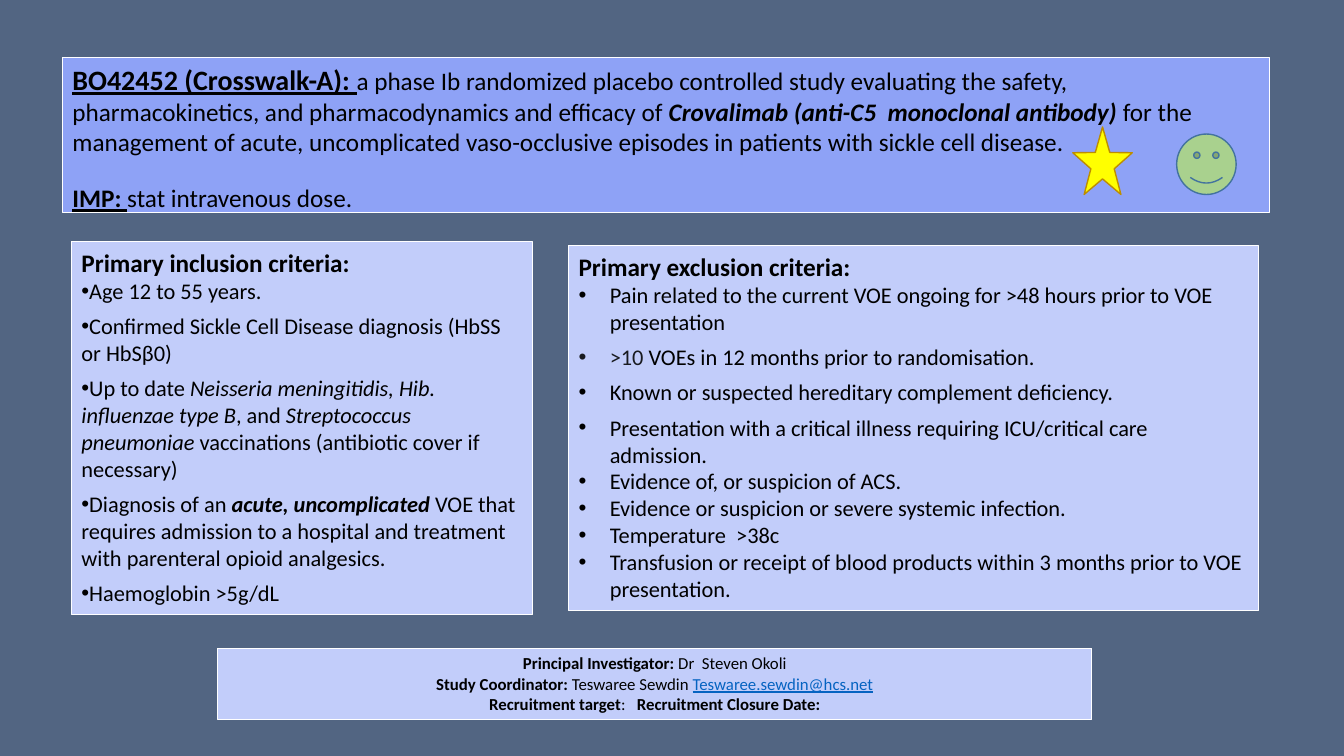
from pptx import Presentation
from pptx.dml.color import RGBColor
from pptx.enum.shapes import MSO_SHAPE
from pptx.enum.text import MSO_ANCHOR, PP_ALIGN
from pptx.oxml.ns import qn
from pptx.util import Inches, Pt
from lxml import etree

RECT, SMILE, STAR = MSO_SHAPE.RECTANGLE, MSO_SHAPE.SMILEY_FACE, MSO_SHAPE.STAR_5_POINT
TOP, LEFT, CENTER = MSO_ANCHOR.TOP, PP_ALIGN.LEFT, PP_ALIGN.CENTER

SLATE = RGBColor(0x52, 0x65, 0x82)
BLUE = RGBColor(0x8E, 0xA2, 0xF6)
PALE = RGBColor(0xC2, 0xCD, 0xFA)
WHITE = RGBColor(0xFF, 0xFF, 0xFF)
BLACK = RGBColor(0, 0, 0)
INK = RGBColor(0x19, 0x1B, 0x20)
LINK = RGBColor(0x05, 0x63, 0xC1)
GREEN = RGBColor(0xA9, 0xD1, 0x8E)
NAVY = RGBColor(0x43, 0x73, 0x9E)
YELLOW = RGBColor(0xFF, 0xFF, 0x00)
GOLD = RGBColor(0xBD, 0x8E, 0x00)

FONT = "Calibri"
HANG = 0.31
PLAIN = {}
BOLD = {"bold": True}
ITALIC = {"italic": True}
STRONG = {"bold": True, "italic": True}
LABEL = {"bold": True, "underline": True}

# Each paragraph is a list of (text, format) runs.
TITLE = [
    [("BO42452 (Crosswalk-A): ", {**LABEL, "size": Pt(20)}),
     ("a phase Ib randomized placebo controlled study evaluating the safety, "
      "pharmacokinetics, and pharmacodynamics and efficacy of ", PLAIN),
     ("Crovalimab (anti-C5  monoclonal antibody) ", STRONG),
     ("for the management of acute, uncomplicated vaso-occlusive episodes "
      "in patients with sickle cell disease.", PLAIN)],
    [("IMP: ", LABEL), ("stat intravenous dose.", PLAIN)],
]
INCLUDE = [
    [("Age 12 to 55 years.", PLAIN)],
    [("Confirmed Sickle Cell Disease diagnosis (HbSS or HbSβ0)", PLAIN)],
    [("Up to date ", PLAIN),
     ("Neisseria meningitidis, Hib. influenzae type B", ITALIC),
     (", and ", PLAIN),
     ("Streptococcus pneumoniae ", ITALIC),
     ("vaccinations (antibiotic cover if necessary)", PLAIN)],
    [("Diagnosis of an ", PLAIN),
     ("acute, uncomplicated", STRONG),
     (" VOE that requires admission to a hospital and treatment "
      "with parenteral opioid analgesics.", PLAIN)],
    [("Haemoglobin >5g/dL", PLAIN)],
]
EXCLUDE = [
    [("Pain related to the current VOE ongoing for >48 hours prior to "
      "VOE presentation", PLAIN)],
    [(">10 ", {"color": INK}),
     ("VOEs in 12 months prior to randomisation.", PLAIN)],
    [("Known or suspected hereditary complement deficiency.", PLAIN)],
    [("Presentation with a critical illness requiring ICU/critical care "
      "admission.", PLAIN)],
    [("Evidence of, or suspicion of ACS.", PLAIN)],
    [("Evidence or suspicion or severe systemic infection.", PLAIN)],
    [("Temperature  >38c", PLAIN)],
    [("Transfusion or receipt of blood products within 3 months prior to "
      "VOE presentation.", PLAIN)],
]
CONTACT = [
    [("Principal Investigator: ", BOLD), ("Dr  Steven Okoli", PLAIN)],
    [("Study Coordinator:", BOLD), (" Teswaree Sewdin ", PLAIN),
     ("Teswaree.sewdin@hcs.net", {"color": LINK, "underline": True})],
    [("Recruitment target", BOLD), (":   ", PLAIN),
     ("Recruitment Closure Date:", BOLD)],
]


def add_shape(slide, kind, box, fill, edge, width):
    shape = slide.shapes.add_shape(kind, *map(Inches, box))
    shape.shadow.inherit = False
    shape.fill.solid()
    shape.fill.fore_color.rgb = fill
    shape.line.color.rgb = edge
    shape.line.width = Pt(width)
    return shape


def add_panel(slide, box, fill):
    """Add a bordered text box and return its text frame."""
    frame = add_shape(slide, RECT, box, fill, WHITE, 0.75).text_frame
    frame.word_wrap = True
    frame.vertical_anchor = TOP
    return frame


def add_para(frame, runs, size, align=LEFT):
    first = frame.paragraphs[0]
    para = frame.add_paragraph() if first.runs else first
    para.alignment = align
    for text, style in runs:
        run = para.add_run()
        run.text = text
        look = {"name": FONT, "size": Pt(size), "color": BLACK, **style}
        run.font.color.rgb = look.pop("color")
        for key, value in look.items():
            setattr(run.font, key, value)
    return para


def add_bullet(para, margin):
    props = para._p.get_or_add_pPr()
    props.set("marL", str(Inches(margin)))
    props.set("indent", str(Inches(-HANG)))
    etree.SubElement(props, qn("a:buFont"), typeface="Arial")
    etree.SubElement(props, qn("a:buChar"), char="•")


def add_header(slide, box):
    left, top, width, _ = box
    frame = add_panel(slide, box, BLUE)
    study, dose = [add_para(frame, runs, 18) for runs in TITLE]
    dose.space_before = Pt(18.5)
    right = left + width
    add_shape(slide, SMILE, (right - 0.92, top + 0.76, 0.59, 0.6), GREEN, NAVY, 1)
    star = add_shape(slide, STAR, (right - 1.95, top + 0.69, 0.59, 0.67), YELLOW, GOLD, 1)
    star.adjustments[0] = 0.196


def add_criteria(slide, box, title, items, margin, spaced):
    """List the items under a title, with a gap after the first `spaced` ones."""
    frame = add_panel(slide, box, PALE)
    add_para(frame, [(title, BOLD)], 18)
    for index, runs in enumerate(items):
        para = add_para(frame, runs, 16)
        para.space_after = Pt(6 if index < spaced else 0)
        add_bullet(para, margin)


def add_contact(slide, box):
    frame = add_panel(slide, box, PALE)
    for runs in CONTACT:
        add_para(frame, runs, 12, CENTER)


def main():
    deck = Presentation()
    deck.slide_width, deck.slide_height = Inches(13.33), Inches(7.5)
    slide = deck.slides.add_slide(deck.slide_layouts[6])
    slide.background.fill.solid()
    slide.background.fill.fore_color.rgb = SLATE
    add_header(slide, (0.62, 0.57, 11.97, 1.54))
    add_criteria(slide, (0.71, 2.4, 4.57, 3.7),
                 "Primary inclusion criteria:", INCLUDE, 0, len(INCLUDE))
    add_criteria(slide, (5.64, 2.44, 6.84, 3.62),
                 "Primary exclusion criteria:", EXCLUDE, HANG, 3)
    add_contact(slide, (2.16, 6.43, 8.67, 0.71))
    deck.save("out.pptx")


if __name__ == "__main__":
    main()
